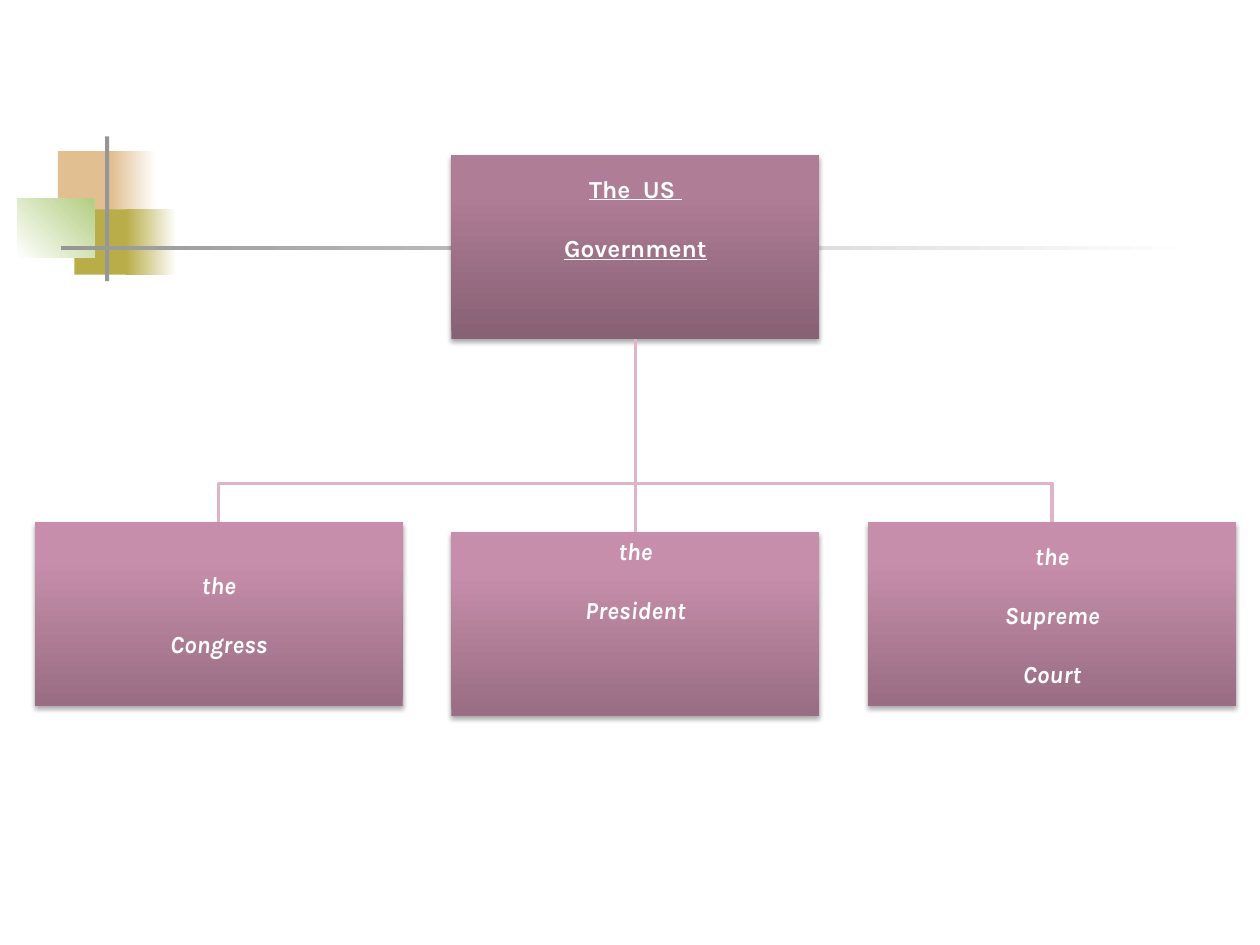
"""Build a chart of the three branches of the US government."""
from lxml import etree
from pptx import Presentation
from pptx.dml.color import RGBColor
from pptx.enum.shapes import MSO_CONNECTOR, MSO_SHAPE
from pptx.enum.text import MSO_ANCHOR, PP_ALIGN
from pptx.oxml.ns import qn
from pptx.util import Cm, Pt

RECTANGLE = MSO_SHAPE.RECTANGLE
STRAIGHT = MSO_CONNECTOR.STRAIGHT
TOP = MSO_ANCHOR.TOP
CENTER = PP_ALIGN.CENTER

ORNAMENTS = [
    # left, top, width, height, colours, angle
    (1.17, 3.05, 1.22, 1.32, ["E1BF91"], 0),
    (2.24, 3.05, 0.91, 1.32, ["E1BF91", "FFFFFF"], 0),
    (1.5, 4.22, 1.17, 1.32, ["B8AD48"], 0),
    (2.54, 4.22, 1.02, 1.32, ["B8AD48", "FFFFFF"], 0),
    (0.35, 4.01, 1.55, 1.18, ["FFFFFF", "B3CE82"], 45),
    (2.12, 2.75, 0.08, 2.92, ["969696"], 0),
    (1.23, 4.95, 22.86, 0.09, ["969696", "FFFFFF"], 0),
]
ROOT = {"lines": ["The  US ", "Government"], "column": 1, "top": 3.12, "inset": 0.38,
        "colours": ["876174", "B07D97"], "font": {"underline": True}}
BRANCH = {"colours": ["996D83", "C78EAB"], "font": {"italic": True}}
BRANCHES = [
    {"lines": ["the", "Congress"], "column": 0, "top": 10.52, "inset": 0.97, **BRANCH},
    {"lines": ["the", "President"], "column": 1, "top": 10.72, "inset": 0.09, **BRANCH},
    {"lines": ["the", "Supreme", "Court"], "column": 2, "top": 10.52, "inset": 0.38, **BRANCH},
]
FIRST_LEFT, COLUMN_STEP = 0.7, 8.4
BOX_WIDTH, BOX_HEIGHT = 7.42, 3.71
BRANCHING_TOP = 9.75
LINE_COLOUR, LINE_WIDTH = "DFB4C9", 2
FONT = {"name": "Karla", "size": Pt(14), "bold": True}
PARAGRAPH_GAP = 17


def colour(hex_value):
    return RGBColor.from_string(hex_value)


def set_format(target, values):
    for name, value in values.items():
        setattr(target, name, value)


def add_rectangle(slide, left, top, width, height, colours, angle, last_position=1.0):
    shape = slide.shapes.add_shape(RECTANGLE, Cm(left), Cm(top), Cm(width), Cm(height))
    shape.shadow.inherit = False
    shape.line.fill.background()
    if len(colours) == 1:
        shape.fill.solid()
        shape.fill.fore_color.rgb = colour(colours[0])
    else:
        shape.fill.gradient()
        shape.fill.gradient_angle = angle
        for stop, position, value in zip(shape.fill.gradient_stops, (0.0, last_position), colours):
            stop.color.rgb = colour(value)
            stop.position = position
    return shape


def add_shadow(shape):
    effects = shape._element.spPr.find(qn("a:effectLst"))
    shadow = etree.SubElement(effects, qn("a:outerShdw"), blurRad=str(Pt(3.1)),
                              dist=str(Pt(1.8)), dir="5400000", rotWithShape="0")
    shade = etree.SubElement(shadow, qn("a:srgbClr"), val="000000")
    etree.SubElement(shade, qn("a:alpha"), val="35000")


def add_box(slide, box):
    left = FIRST_LEFT + box["column"] * COLUMN_STEP
    shape = add_rectangle(slide, left, box["top"], BOX_WIDTH, BOX_HEIGHT, box["colours"], 90, 0.8)
    add_shadow(shape)
    frame = shape.text_frame
    set_format(frame, {"word_wrap": True, "vertical_anchor": TOP, "margin_top": Cm(box["inset"]),
                       "margin_left": Cm(0.03), "margin_right": Cm(0.03), "margin_bottom": 0})
    for index, line in enumerate(box["lines"]):
        paragraph = frame.add_paragraph() if index else frame.paragraphs[0]
        set_format(paragraph, {"alignment": CENTER, "space_before": Pt(PARAGRAPH_GAP if index else 0)})
        run = paragraph.add_run()
        run.text = line
        set_format(run.font, {**FONT, **box["font"]})
        run.font.color.rgb = colour("FFFFFF")
    return shape


def style_line(line):
    line.color.rgb = colour(LINE_COLOUR)
    line.width = Pt(LINE_WIDTH)


def join(slide, root, branch):
    start_x, end_x = (shape.left + shape.width // 2 for shape in (root, branch))
    start_y = root.top + root.height
    if start_x == end_x:
        connector = slide.shapes.add_connector(STRAIGHT, start_x, start_y, end_x, branch.top)
        connector.begin_connect(root, 2)
        connector.end_connect(branch, 0)
        etree.SubElement(connector._element.spPr, qn("a:effectLst"))
        style_line(connector.line)
        return
    bend_y = Cm(BRANCHING_TOP)
    builder = slide.shapes.build_freeform(start_x, start_y)
    builder.add_line_segments([(start_x, bend_y), (end_x, bend_y), (end_x, branch.top)], close=False)
    elbow = builder.convert_to_shape()
    elbow.shadow.inherit = False
    elbow.fill.background()
    style_line(elbow.line)


def main():
    presentation = Presentation()
    set_format(presentation, {"slide_width": Cm(25.4), "slide_height": Cm(19.05)})
    slide = presentation.slides.add_slide(presentation.slide_layouts[6])
    for ornament in ORNAMENTS:
        add_rectangle(slide, *ornament)
    root = add_box(slide, ROOT)
    for branch in BRANCHES:
        join(slide, root, add_box(slide, branch))
    presentation.save("out.pptx")


if __name__ == "__main__":
    main()
